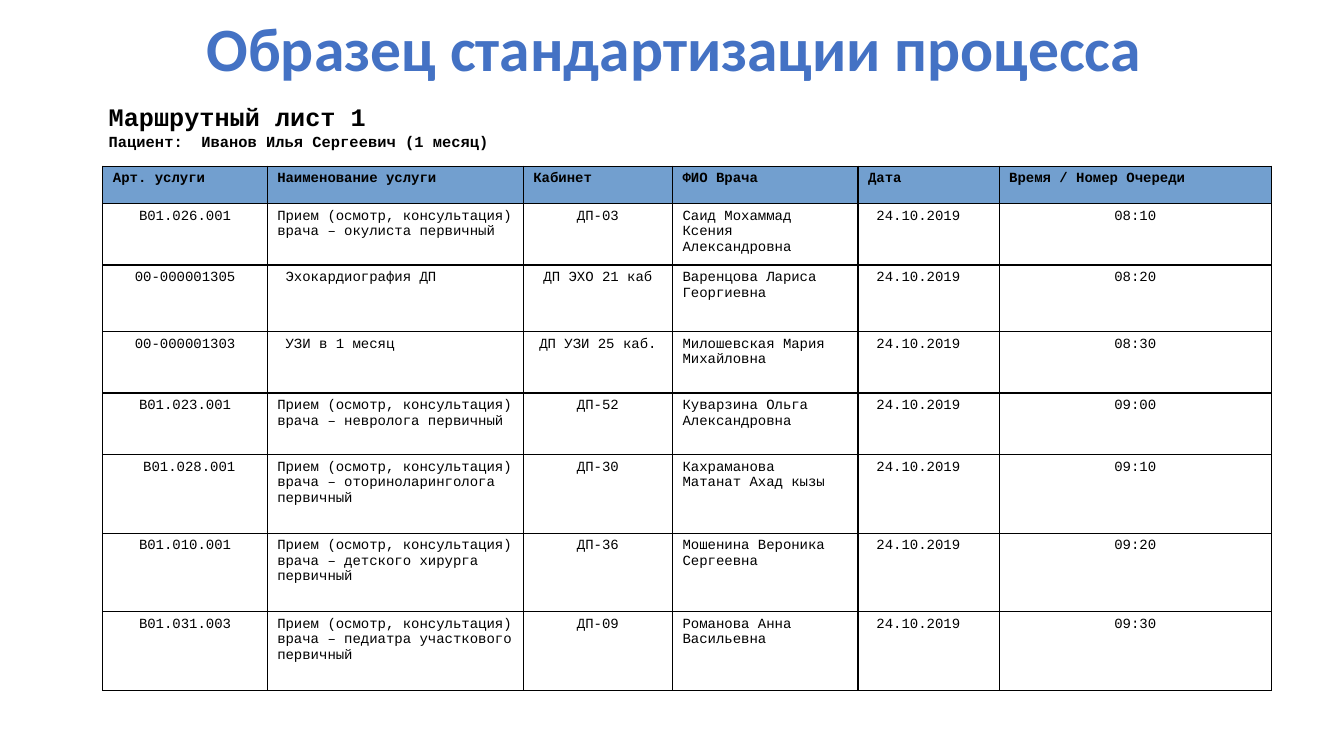
from lxml import etree
from pptx import Presentation
from pptx.dml.color import RGBColor
from pptx.enum.text import MSO_ANCHOR, PP_ALIGN
from pptx.oxml.ns import qn
from pptx.util import Inches, Pt

LEFT, CENTER = PP_ALIGN.LEFT, PP_ALIGN.CENTER
TOP, MIDDLE = MSO_ANCHOR.TOP, MSO_ANCHOR.MIDDLE

COLORS = {"title": "4472C4", "header": "729FCF", "cell": "FFFFFF", "ink": "000000"}
TITLE_FONT, SHEET_FONT = "Calibri", "Courier New"

COLUMN_WIDTHS = [1.63, 2.54, 1.48, 1.84, 1.4, 2.7]
COLUMN_ALIGNMENTS = [CENTER, LEFT, CENTER, LEFT, LEFT, CENTER]
ROW_HEIGHTS = [0.37, 0.61, 0.66, 0.61, 0.61, 0.78, 0.78, 0.78]
HEADERS = ["Арт. услуги", "Наименование услуги", "Кабинет", "ФИО Врача", "Дата",
           "Время / Номер Очереди"]
VISIT_DATE = " 24.10.2019"
EXAM = "Прием (осмотр, консультация) врача – "
VISITS = [
    ("В01.026.001", EXAM + "окулиста первичный", "ДП-03",
     "Саид Мохаммад Ксения Александровна", VISIT_DATE, "08:10"),
    ("00-000001305", " Эхокардиография ДП", "ДП ЭХО 21 каб",
     "Варенцова Лариса Георгиевна", VISIT_DATE, "08:20"),
    ("00-000001303", " УЗИ в 1 месяц", "ДП УЗИ 25 каб.",
     "Милошевская Мария Михайловна", VISIT_DATE, "08:30"),
    ("В01.023.001", EXAM + "невролога первичный", "ДП-52",
     "Куварзина Ольга Александровна", VISIT_DATE, "09:00"),
    (" В01.028.001", EXAM + "оториноларинголога первичный", "ДП-30",
     "Кахраманова\nМатанат Ахад кызы", VISIT_DATE, "09:10"),
    ("В01.010.001", EXAM + "детского хирурга первичный", "ДП-36",
     "Мошенина Вероника Сергеевна", VISIT_DATE, "09:20"),
    ("В01.031.003", EXAM + "педиатра участкового первичный", "ДП-09",
     "Романова Анна Васильевна", VISIT_DATE, "09:30"),
]


def format_paragraph(paragraph, font_name, size, color, bold, alignment=LEFT, spacing=1.0):
    paragraph.alignment = alignment
    paragraph.line_spacing = spacing
    for run in paragraph.runs:
        run.font.name = font_name
        run.font.size = Pt(size)
        run.font.bold = bold
        run.font.color.rgb = RGBColor.from_string(COLORS[color])


def add_text_frame(slide, box, text, anchor):
    shape = slide.shapes.add_textbox(*(Inches(length) for length in box))
    text_frame = shape.text_frame
    text_frame.word_wrap = True
    text_frame.vertical_anchor = anchor
    text_frame.text = text
    return text_frame


def add_title(slide, box):
    text_frame = add_text_frame(slide, box, "Образец стандартизации процесса", MIDDLE)
    format_paragraph(text_frame.paragraphs[0], TITLE_FONT, 44, "title", True, CENTER, 0.9)


def add_patient_heading(slide, box):
    text = "Маршрутный лист 1\nПациент:  Иванов Илья Сергеевич (1 месяц)"
    text_frame = add_text_frame(slide, box, text, TOP)
    for paragraph, size in zip(text_frame.paragraphs, (18, 11)):
        format_paragraph(paragraph, SHEET_FONT, size, "ink", True)


def set_borders(cell):
    properties = cell._tc.get_or_add_tcPr()
    for position, side in enumerate(("lnL", "lnR", "lnT", "lnB")):
        line = etree.Element(qn(f"a:{side}"), w=str(Pt(1)))
        fill = etree.SubElement(line, qn("a:solidFill"))
        etree.SubElement(fill, qn("a:srgbClr"), val=COLORS["ink"])
        properties.insert(position, line)


def fill_cell(cell, text, fill, bold, alignment):
    cell.fill.solid()
    cell.fill.fore_color.rgb = RGBColor.from_string(COLORS[fill])
    set_borders(cell)
    cell.text_frame.text = text
    for paragraph in cell.text_frame.paragraphs:
        format_paragraph(paragraph, SHEET_FONT, 10, "ink", bold, alignment, 0.98)


def add_route_table(slide, box):
    lengths = (Inches(length) for length in box)
    table = slide.shapes.add_table(len(ROW_HEIGHTS), len(COLUMN_WIDTHS), *lengths).table
    table.first_row = False
    table.horz_banding = False
    for column, width in zip(table.columns, COLUMN_WIDTHS):
        column.width = Inches(width)
    for row, height in zip(table.rows, ROW_HEIGHTS):
        row.height = Inches(height)
    for cell, text in zip(table.rows[0].cells, HEADERS):
        fill_cell(cell, text, "header", True, LEFT)
    for row_index, visit in enumerate(VISITS, start=1):
        for cell, text, alignment in zip(table.rows[row_index].cells, visit, COLUMN_ALIGNMENTS):
            fill_cell(cell, text, "cell", False, alignment)


def main():
    presentation = Presentation()
    presentation.slide_width = Inches(13.33)
    presentation.slide_height = Inches(7.5)
    slide = presentation.slides.add_slide(presentation.slide_layouts[6])
    add_title(slide, (0.94, 0.16, 11.5, 0.7))
    add_route_table(slide, (1.02, 1.65, sum(COLUMN_WIDTHS), sum(ROW_HEIGHTS)))
    add_patient_heading(slide, (0.98, 0.96, 6.07, 0.64))
    presentation.save("out.pptx")


if __name__ == "__main__":
    main()
